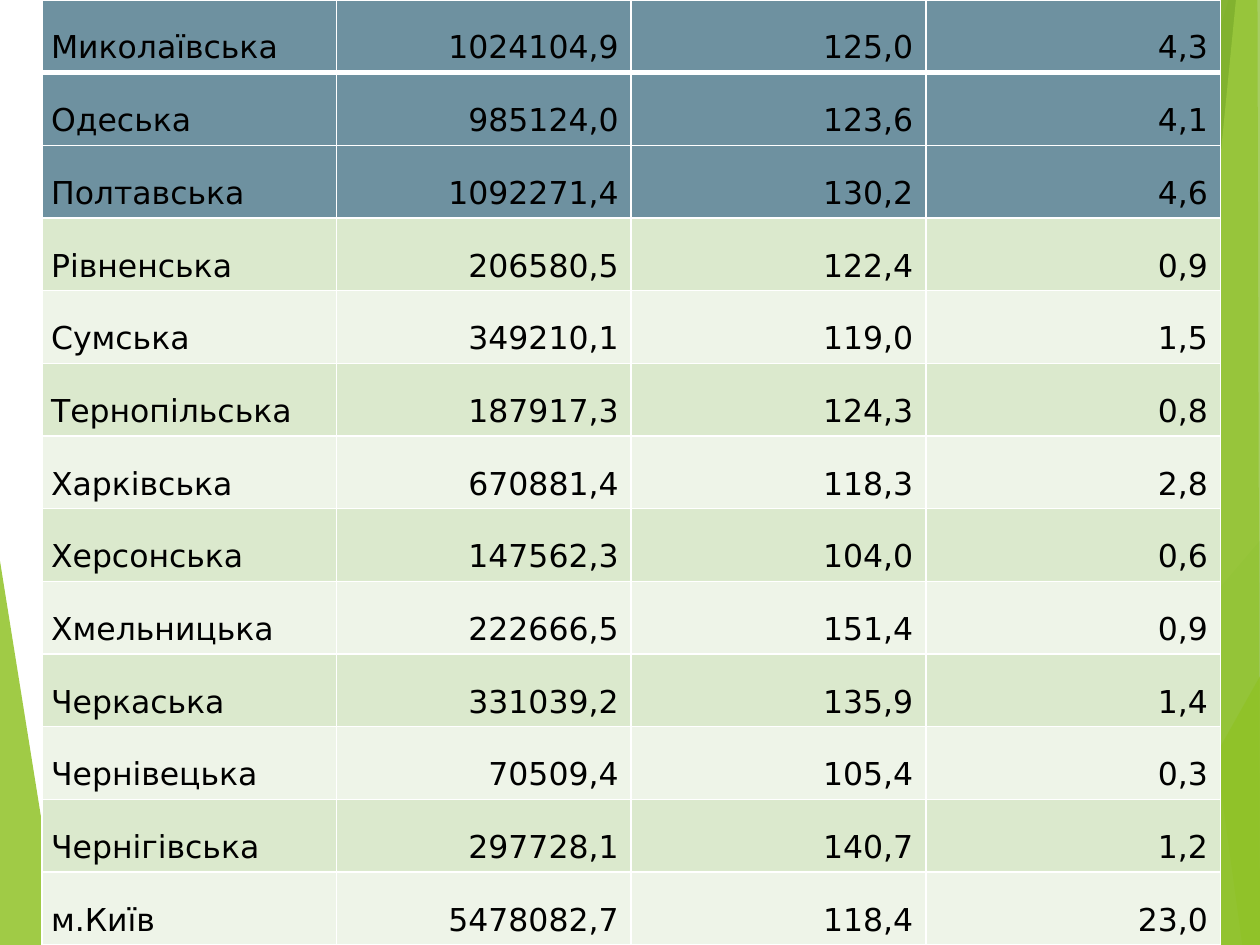
from lxml import etree
from pptx import Presentation
from pptx.dml.color import RGBColor
from pptx.enum import shapes, text
from pptx.oxml import ns
from pptx.util import Pt

WIDTH, HEIGHT = 720, 540
FONT = "DejaVu Sans"
BLACK = RGBColor(0x00, 0x00, 0x00)
WHITE = RGBColor(0xFF, 0xFF, 0xFF)
LIME = RGBColor(0x90, 0xC2, 0x26)
GREEN = RGBColor(0x54, 0xA0, 0x21)
DARK_GREEN = RGBColor(0x3F, 0x78, 0x19)
PALE_LIME = RGBColor(0xC0, 0xE4, 0x74)
LIGHT_GREY = RGBColor(0xD9, 0xD9, 0xD9)
GREY = RGBColor(0xBF, 0xBF, 0xBF)
SLATE = RGBColor(0x6E, 0x91, 0xA0)
BAND_DARK = RGBColor(0xDB, 0xE9, 0xCD)
BAND_LIGHT = RGBColor(0xEE, 0xF4, 0xE8)

HIGHLIGHTED_ROWS = 3
REGIONS = [
    ("Миколаївська", "1024104,9", "125,0", "4,3"),
    ("Одеська", "985124,0", "123,6", "4,1"),
    ("Полтавська", "1092271,4", "130,2", "4,6"),
    ("Рiвненська", "206580,5", "122,4", "0,9"),
    ("Сумська", "349210,1", "119,0", "1,5"),
    ("Тернопiльська", "187917,3", "124,3", "0,8"),
    ("Харкiвська", "670881,4", "118,3", "2,8"),
    ("Херсонська", "147562,3", "104,0", "0,6"),
    ("Хмельницька", "222666,5", "151,4", "0,9"),
    ("Черкаська", "331039,2", "135,9", "1,4"),
    ("Чернiвецька", "70509,4", "105,4", "0,3"),
    ("Чернігівська", "297728,1", "140,7", "1,2"),
    ("м.Київ", "5478082,7", "118,4", "23,0"),
]


def add_facet(page, points, color, opacity):
    """Draw a translucent polygon without an outline."""
    start, *others = [(Pt(x), Pt(y)) for x, y in points]
    builder = page.shapes.build_freeform(*start, scale=1.0)
    builder.add_line_segments(others, close=True)
    facet = builder.convert_to_shape()
    facet.shadow.inherit = False
    facet.line.fill.background()
    facet.fill.solid()
    facet.fill.fore_color.rgb = color
    tint = facet._element.spPr.find(".//" + ns.qn("a:srgbClr"))
    etree.SubElement(tint, ns.qn("a:alpha"), val=str(opacity * 1000))


def add_hairline(page, start, end, color):
    line = page.shapes.add_connector(
        shapes.MSO_CONNECTOR.STRAIGHT, *[Pt(value) for value in start + end])
    line.line.color.rgb = color
    line.line.width = Pt(0.75)
    etree.SubElement(line._element.spPr, ns.qn("a:effectLst"))


def add_backdrop(page, left, top, width, height):
    """Place the faceted side decoration in the given box."""
    right, bottom = left + width, top + height
    edge = right + 0.7

    # Left wedge
    add_facet(page, [(left - 0.7, top + 316), (left + 35.3, bottom + 0.7),
                     (left - 0.7, bottom)], LIME, 85)

    # Thin crossing lines
    add_hairline(page, (right - 316, bottom), (edge, top + 329), LIGHT_GREY)
    add_hairline(page, (right - 165.6, top), (right - 69.1, bottom), GREY)

    # Right facets, as (distance from right at top, at bottom, start height)
    facets = [
        (18, 177.1, 0, LIME, 30),
        (152.6, 58.3, 0, LIME, 20),
        (0, 197.3, 308.9, GREEN, 72),
        (167.8, 21.6, 0, DARK_GREEN, 70),
        (13.7, 67, 0, PALE_LIME, 70),
        (84.2, 10.1, 0, LIME, 65),
        (-0.7, 86.4, 385.2, LIME, 80),
    ]
    for upper, lower, start, color, opacity in facets:
        # The last full-height facet narrows to the slide edge at its top
        corner = right - 1.4 if upper == 84.2 else edge
        foot = right if upper == 84.2 else edge
        add_facet(page, [(right - upper, top + start), (right - lower, bottom),
                         (foot, bottom), (corner, top + start)], color, opacity)


def add_border(cell, side, width):
    line = etree.SubElement(cell._tc.get_or_add_tcPr(), ns.qn("a:ln" + side),
                            w=str(Pt(width)))
    fill = etree.SubElement(line, ns.qn("a:solidFill"))
    etree.SubElement(fill, ns.qn("a:srgbClr"), val=str(WHITE))


def format_cell(cell, value, row, column):
    # Borders go in before the fill; the first row has a heavy lower edge
    for side in "LRTB":
        heavy = (row, side) in ((0, "B"), (1, "T"))
        add_border(cell, side, 3 if heavy else 1)
    cell.fill.solid()
    if row < HIGHLIGHTED_ROWS:
        cell.fill.fore_color.rgb = SLATE
    else:
        cell.fill.fore_color.rgb = BAND_DARK if row % 2 else BAND_LIGHT

    cell.vertical_anchor = text.MSO_ANCHOR.BOTTOM
    cell.margin_left = cell.margin_right = Pt(7.2 if column else 5.2)
    cell.margin_top = cell.margin_bottom = Pt(3.6)
    para = cell.text_frame.paragraphs[0]
    para.alignment = text.PP_ALIGN.RIGHT if column else text.PP_ALIGN.LEFT
    span = para.add_run()
    span.text = value
    span.font.name = FONT
    span.font.size = Pt(18)
    span.font.color.rgb = BLACK


def add_region_table(page, left, top, width, height):
    """Fill the given box with equal rows and columns."""
    row_count, column_count = len(REGIONS), len(REGIONS[0])
    table = page.shapes.add_table(row_count, column_count, Pt(left), Pt(top),
                                  Pt(width), Pt(height)).table
    table.first_row = table.horz_banding = False
    for column in table.columns:
        column.width = Pt(width / column_count)
    for row in table.rows:
        row.height = Pt(height / row_count)
    for row, values in enumerate(REGIONS):
        for column, value in enumerate(values):
            format_cell(table.cell(row, column), value, row, column)


def main():
    deck = Presentation()
    deck.slide_width, deck.slide_height = Pt(WIDTH), Pt(HEIGHT)
    page = deck.slides.add_slide(deck.slide_layouts[6])
    page.background.fill.solid()
    page.background.fill.fore_color.rgb = WHITE
    add_backdrop(page, 0, 0, WIDTH, HEIGHT)
    add_region_table(page, 24, 0, 673.5, HEIGHT)
    deck.save("out.pptx")


if __name__ == "__main__":
    main()
